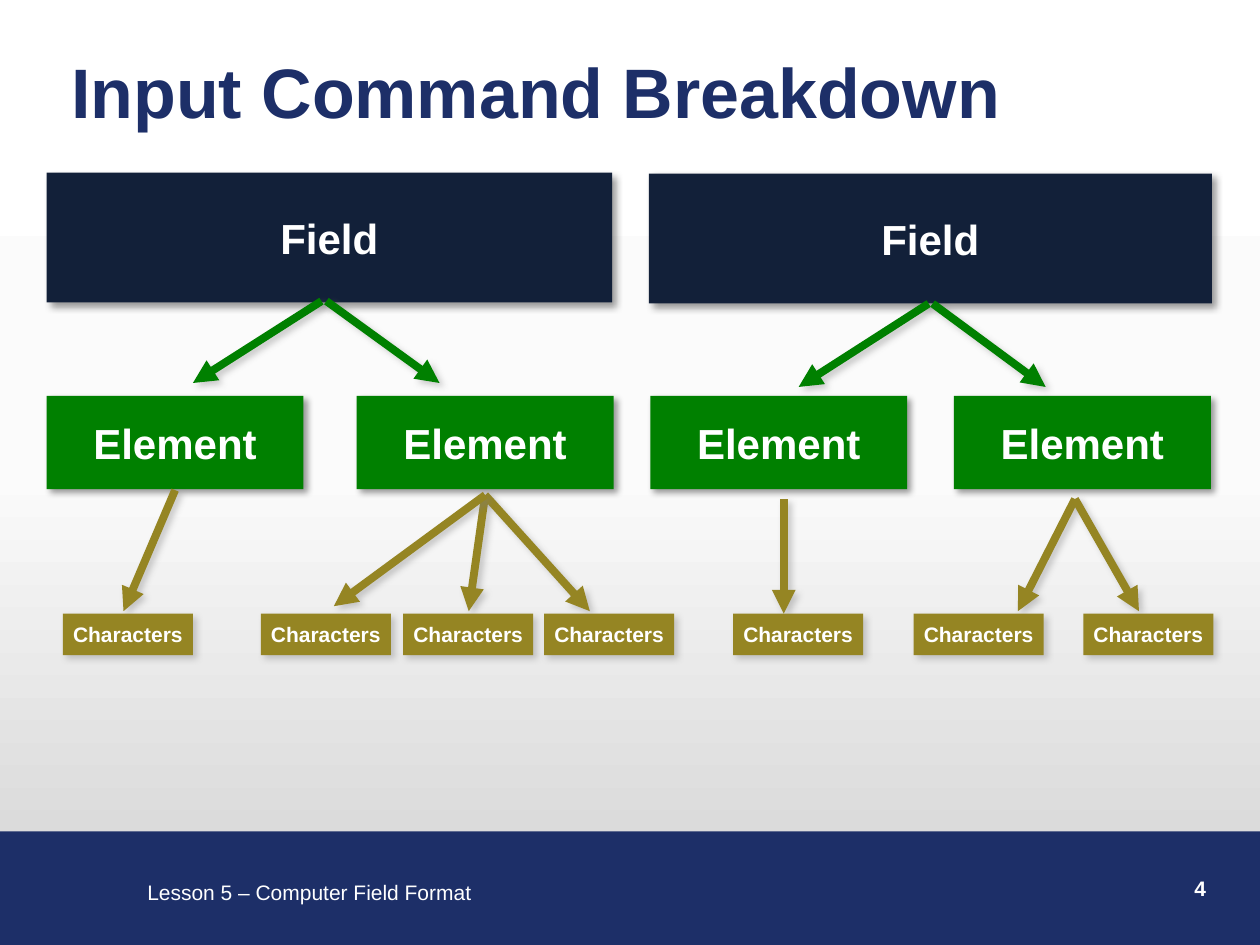
from lxml import etree
from pptx import Presentation
from pptx import util as u
from pptx.dml.color import RGBColor
from pptx.enum import shapes, text
from pptx.oxml import parse_xml
from pptx.oxml.ns import nsdecls, qn

NAVY = RGBColor(0x1D, 0x2F, 0x68)
INK = RGBColor(0x12, 0x20, 0x39)
GREEN = RGBColor(0x00, 0x80, 0x00)
GOLD = RGBColor(0x95, 0x85, 0x23)
WHITE = RGBColor(0xFF, 0xFF, 0xFF)
BLACK = RGBColor(0x00, 0x00, 0x00)
GRAY = RGBColor(0x80, 0x80, 0x80)
BACKDROP = [(0, WHITE), (50, RGBColor(0xFB, 0xFB, 0xFB)), (100, RGBColor(0xD0, 0xD0, 0xD0))]

FIELDS = [(0.94, 3.48, 11.4), (13.08, 3.5, 11.35)]
ELEMENTS = [0.94, 7.19, 13.11, 19.23]
CHARACTERS = [1.27, 5.26, 8.13, 10.97, 14.78, 18.42, 21.84]
FIELD_ARROWS = [
    ((6.48, 6.07), [(3.89, 7.72)]),
    ((6.58, 6.07), [(8.86, 7.72)]),
    ((18.72, 6.12), [(16.1, 7.8)]),
    ((18.8, 6.12), [(21.08, 7.8)]),
]
ELEMENT_ARROWS = [
    ((3.53, 9.88), [(2.49, 12.32)]),
    ((9.78, 9.98), [(9.45, 12.32), (11.89, 12.32), (6.73, 12.22)]),
    ((15.8, 10.06), [(15.8, 12.37)]),
    ((21.67, 10.06), [(20.52, 12.32), (22.96, 12.32)]),
]


def apply(target, values):
    for name, value in values.items():
        setattr(target, name, value)


def cm(lengths):
    return [u.Cm(length) for length in lengths]


def paint_background(page):
    page.background.fill.solid()
    stops = "".join(
        f'<a:gs pos="{place * 1000}"><a:srgbClr val="{color}"/></a:gs>'
        for place, color in BACKDROP
    )
    gradient = parse_xml(
        f'<a:gradFill {nsdecls("a")} rotWithShape="1"><a:gsLst>{stops}</a:gsLst>'
        '<a:lin ang="5400000" scaled="0"/></a:gradFill>'
    )
    solid = next(page.background._cSld.iter(qn("a:solidFill")))
    solid.getparent().replace(solid, gradient)


def add_shadow(shape, color):
    properties = shape._element.spPr
    for effects in properties.findall(qn("a:effectLst")):
        properties.remove(effects)
    properties.append(parse_xml(
        f'<a:effectLst {nsdecls("a")}>'
        f'<a:outerShdw blurRad="{u.Pt(4)}" dist="{u.Pt(3)}" dir="2700000" algn="ctr" rotWithShape="0">'
        f'<a:srgbClr val="{color}"><a:alpha val="40000"/></a:srgbClr>'
        '</a:outerShdw></a:effectLst>'
    ))


def write(shape, wording, size, frame_format, align, bold=True, color=WHITE):
    apply(shape.text_frame, frame_format)
    para = shape.text_frame.paragraphs[0]
    para.alignment = align
    span = para.add_run()
    span.text = wording
    apply(span.font, {"name": "Arial", "size": u.Pt(size), "bold": bold})
    span.font.color.rgb = color


def add_rectangle(page, place, color):
    box = page.shapes.add_shape(shapes.MSO_SHAPE.RECTANGLE, *cm(place))
    box.shadow.inherit = False
    box.fill.solid()
    box.fill.fore_color.rgb = color
    box.line.fill.background()
    return box


def add_node(page, place, wording, size, color, shadow):
    box = add_rectangle(page, place, color)
    add_shadow(box, shadow)
    frame_format = {"word_wrap": False, "vertical_anchor": text.MSO_ANCHOR.MIDDLE}
    write(box, wording, size, frame_format, text.PP_ALIGN.CENTER)


def add_label(page, place, wording, size, frame_format, align=text.PP_ALIGN.LEFT, **style):
    box = page.shapes.add_textbox(*cm(place))
    write(box, wording, size, frame_format, align, **style)


def add_arrow(page, start, end, color):
    arrow = page.shapes.add_connector(shapes.MSO_CONNECTOR.STRAIGHT, *cm(start + end))
    arrow.line.width = u.Pt(4.5)
    arrow.line.color.rgb = color
    etree.SubElement(arrow.line._get_or_add_ln(), qn("a:tailEnd"), type="triangle")
    add_shadow(arrow, GRAY)


def add_arrows(page, fans, color):
    for start, ends in fans:
        for end in ends:
            add_arrow(page, start, end, color)


def main():
    deck = Presentation()
    apply(deck, {"slide_width": u.Cm(25.4), "slide_height": u.Cm(19.05)})
    page = deck.slides.add_slide(deck.slide_layouts[6])
    paint_background(page)

    add_rectangle(page, (-0.05, 16.76, 25.45, 2.29), NAVY)
    add_label(page, (2.72, 17.6, 7.11, 0.76), "Lesson 5 – Computer Field Format", 12,
              {"word_wrap": False, "auto_size": text.MSO_AUTO_SIZE.SHAPE_TO_FIT_TEXT}, bold=False)
    add_label(page, (19.28, 17.53, 5.28, 1.27), "4", 12, {"word_wrap": True}, text.PP_ALIGN.RIGHT)
    add_label(page, (1.19, 0.97, 23.55, 1.7), "Input Command Breakdown", 40,
              {"word_wrap": True, "vertical_anchor": text.MSO_ANCHOR.MIDDLE}, color=NAVY)

    for left, top, width in FIELDS:
        add_node(page, (left, top, width, 2.62), "Field", 24, INK, BLACK)
    for left in ELEMENTS:
        add_node(page, (left, 7.98, 5.18, 1.88), "Element", 24, GREEN, BLACK)
    add_arrows(page, FIELD_ARROWS, GREEN)
    add_arrows(page, ELEMENT_ARROWS, GOLD)
    for left in CHARACTERS:
        add_node(page, (left, 12.37, 2.62, 0.84), "Characters", 12, GOLD, GRAY)

    deck.save("out.pptx")


if __name__ == "__main__":
    main()
